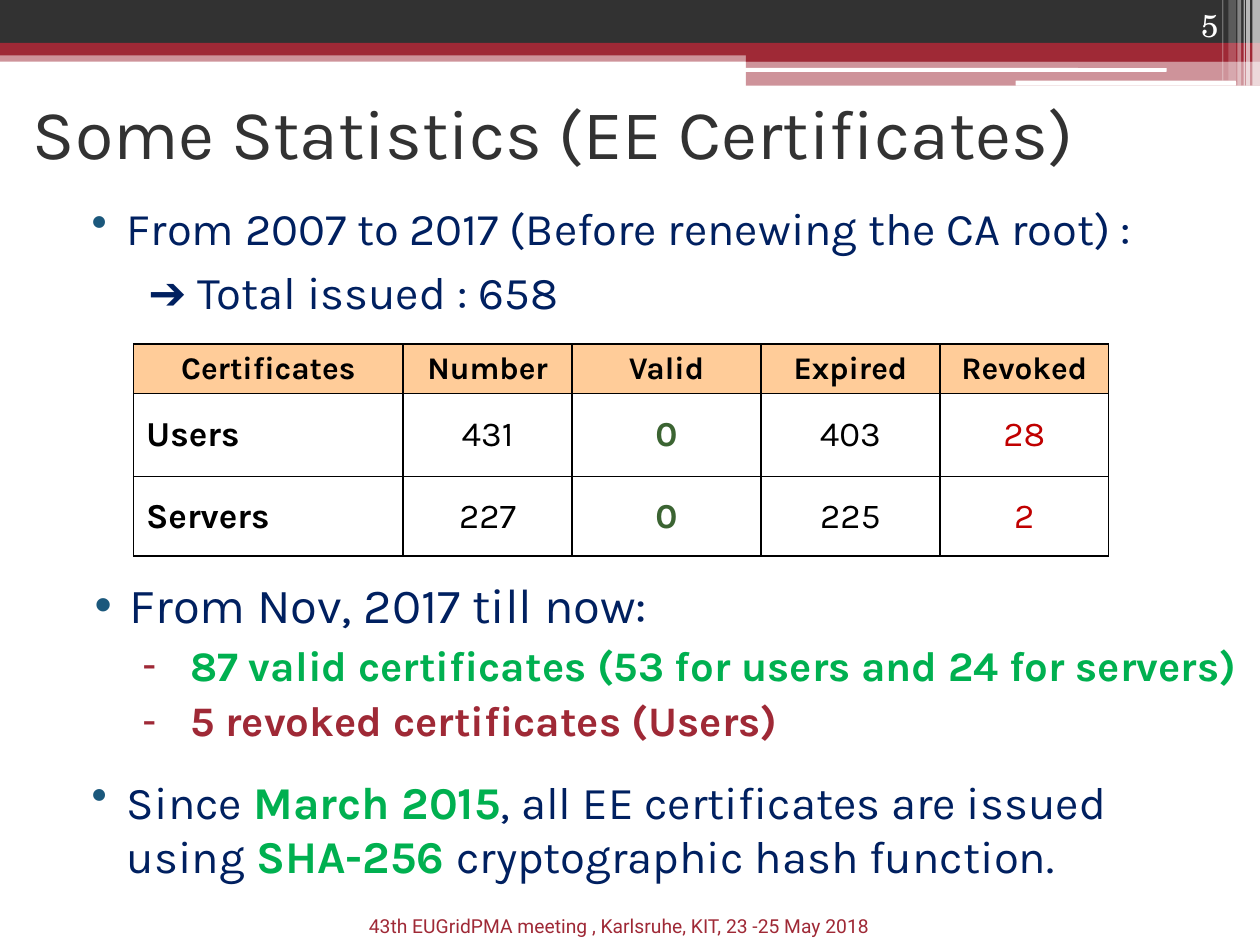
"""Build the slide with statistics on end entity certificates."""
from dataclasses import dataclass

from pptx import Presentation
from pptx.dml.color import RGBColor
from pptx.enum.shapes import MSO_SHAPE as Shape
from pptx.enum.text import MSO_ANCHOR as Anchor, MSO_AUTO_SIZE as AutoSize, PP_ALIGN as Align
from pptx.oxml.ns import qn
from pptx.util import Inches, Pt
from lxml.etree import SubElement

COLORS = {
    "dark": "323232", "red": "9F2936", "white": "FFFFFF", "black": "000000",
    "navy": "002060", "green": "00B050", "blue": "1B587C", "header": "FFCC99",
    "valid": "3B6432", "revoked": "C00000",
}


@dataclass
class Band:
    left: float
    top: float
    width: float
    height: float
    color: str
    opacity: int = 100
    preset: Shape = Shape.RECTANGLE


@dataclass
class Run:
    text: str
    color: str = "navy"
    bold: bool = False


BANDS = [
    Band(0, 0.4, 10, 0.09, "red", 50),
    Band(0, 0, 10, 0.34, "dark"),
    Band(0, 0.34, 10, 0.1, "red"),
    Band(5.92, 0.39, 4.08, 0.1, "red"),
    Band(5.92, 0.48, 4.08, 0.2, "red", 50),
    Band(5.91, 0.54, 3.35, 0.03, "white", preset=Shape.ROUNDED_RECTANGLE),
    Band(8.06, 0.64, 1.75, 0.04, "white", preset=Shape.ROUNDED_RECTANGLE),
    Band(9.94, 0, 0.06, 0.68, "white", 65),
    Band(9.89, 0, 0.03, 0.68, "white", 65),
    Band(9.87, 0, 0.01, 0.68, "white", 60),
    Band(9.82, 0, 0.03, 0.68, "white", 40),
    Band(9.75, 0, 0.06, 0.64, "white", 20),
    Band(9.7, 0, 0.01, 0.64, "white", 30),
]
COLUMN_WIDTHS = [2.14, 1.34, 1.5, 1.42, 1.34]
ROW_HEIGHTS = [0.39, 0.66, 0.63]
COLUMN_COLORS = ["black", "black", "valid", "black", "revoked"]
BOLD_COLUMNS = {0, 2}
ROWS = [
    ["Certificates", "Number", "Valid", "Expired", "Revoked"],
    ["Users", "431", "0", "403", "28"],
    ["Servers", "227", "0", "225", "2"],
]


def rgb(name: str) -> RGBColor:
    """Return the named colour."""
    return RGBColor.from_string(COLORS[name])


def draw_band(slide, band: Band) -> None:
    """Draw one stripe of the header decoration."""
    shape = slide.shapes.add_shape(
        band.preset, Inches(band.left), Inches(band.top), Inches(band.width), Inches(band.height))
    shape.shadow.inherit = False
    shape.fill.solid()
    shape.fill.fore_color.rgb = rgb(band.color)
    shape.line.fill.background()
    if band.opacity < 100:
        color = shape._element.spPr.find(qn("a:solidFill"))[0]
        SubElement(color, qn("a:alpha"), val=str(band.opacity * 1000))


def place(shape, left: float, top: float, width: float, height: float, anchor=Anchor.TOP):
    """Position a text shape and return its text frame."""
    shape.left, shape.top = Inches(left), Inches(top)
    shape.width, shape.height = Inches(width), Inches(height)
    frame = shape.text_frame
    frame.word_wrap = True
    frame.auto_size = AutoSize.NONE
    frame.vertical_anchor = anchor
    return frame


def add_text_box(slide, *box: float, anchor=Anchor.TOP):
    """Add a text box and return its text frame."""
    shape = slide.shapes.add_textbox(0, 0, 0, 0)
    return place(shape, *box, anchor=anchor)


def write(paragraph, *runs: Run, size: float, font: str = "Karla", align=Align.LEFT,
          before: float = 0, after: float = 0, spacing: float = 1.0) -> None:
    """Fill a paragraph with formatted runs."""
    paragraph.alignment = align
    paragraph.line_spacing = spacing
    paragraph.space_before, paragraph.space_after = Pt(before), Pt(after)
    for item in runs:
        run = paragraph.add_run()
        run.text = item.text
        run.font.name, run.font.size, run.font.bold = font, Pt(size), item.bold
        run.font.color.rgb = rgb(item.color)


def indent(paragraph, margin: float, first: float = 0, bullet: str = "", color: str = "blue") -> None:
    """Set the indent of a paragraph and its bullet, if any."""
    properties = paragraph._p.get_or_add_pPr()
    properties.set("marL", str(Inches(margin)))
    properties.set("indent", str(Inches(first)))
    if bullet:
        bullet_color = SubElement(properties, qn("a:buClr"))
        SubElement(bullet_color, qn("a:srgbClr"), val=COLORS[color])
        SubElement(properties, qn("a:buChar"), char=bullet)


def set_borders(cell) -> None:
    """Give a cell thin black borders."""
    properties = cell._tc.get_or_add_tcPr()
    for side in ("lnL", "lnR", "lnT", "lnB"):
        line = SubElement(properties, qn(f"a:{side}"), w=str(Pt(1)))
        fill = SubElement(line, qn("a:solidFill"))
        SubElement(fill, qn("a:srgbClr"), val=COLORS["black"])


def draw_table(slide) -> None:
    """Draw the table of certificate counts."""
    table = slide.shapes.add_table(
        len(ROWS), len(COLUMN_WIDTHS), Inches(1.06), Inches(2.73),
        Inches(sum(COLUMN_WIDTHS)), Inches(sum(ROW_HEIGHTS))).table
    for column, width in zip(table.columns, COLUMN_WIDTHS):
        column.width = Inches(width)
    for row_index, (row, height) in enumerate(zip(ROWS, ROW_HEIGHTS)):
        table.rows[row_index].height = Inches(height)
        header = row_index == 0
        for column_index, text in enumerate(row):
            cell = table.cell(row_index, column_index)
            cell.vertical_anchor = Anchor.MIDDLE
            set_borders(cell)
            if header:
                cell.fill.solid()
                cell.fill.fore_color.rgb = rgb("header")
            else:
                cell.fill.background()
            color = "black" if header else COLUMN_COLORS[column_index]
            bold = header or column_index in BOLD_COLUMNS
            align = Align.CENTER if header or column_index else Align.LEFT
            write(cell.text_frame.paragraphs[0], Run(text, color, bold),
                  size=18 if header else 20, align=align)


def main() -> None:
    """Build and save the presentation."""
    presentation = Presentation()
    presentation.slide_width, presentation.slide_height = Inches(10), Inches(7.5)
    slide = presentation.slides.add_slide(presentation.slide_layouts[1])
    for band in BANDS:
        draw_band(slide, band)

    title = place(slide.shapes.title, 0.16, 0.46, 9, 1.17, anchor=Anchor.MIDDLE)
    write(title.paragraphs[0], Run("Some Statistics (EE Certificates)", "dark"), size=40)
    number = add_text_box(slide, 8.94, 0, 0.83, 0.4, anchor=Anchor.BOTTOM)
    write(number.paragraphs[0], Run("5", "white"), size=18, font="TeX Gyre Schola", align=Align.RIGHT)
    footer = add_text_box(slide, 2.24, 7.21, 5.35, 0.31)
    write(footer.paragraphs[0], Run("43th EUGridPMA meeting , Karlsruhe, KIT, 23 -25 May 2018", "red"),
          size=11, font="Roboto", align=Align.CENTER)
    draw_table(slide)

    recent = place(slide.placeholders[1], 0.53, 4.28, 9.41, 1.89)
    heading = recent.paragraphs[0]
    write(heading, Run("From Nov, 2017 till now:"), size=28, before=3, spacing=1.5)
    indent(heading, 0.4, -0.28, "•")
    for text, color in (("87 valid certificates (53 for users and 24 for servers)", "green"),
                        ("5 revoked certificates (Users)", "red")):
        paragraph = recent.add_paragraph()
        paragraph.level = 1
        write(paragraph, Run(text, color, True), size=24, before=3)
        indent(paragraph, 0.88, -0.38, "-", "red")

    period = add_text_box(slide, 0.51, 1.37, 9, 0.73).paragraphs[0]
    write(period, Run("From 2007 to 2017 (Before renewing the CA root) :"),
          size=25.9, before=3, spacing=1.4)
    indent(period, 0.4, -0.28, "•")
    hashing = add_text_box(slide, 0.51, 6.09, 9, 1.2).paragraphs[0]
    write(hashing, Run("Since "), Run("March 2015", "green", True),
          Run(", all EE certificates are issued using "), Run("SHA-256 ", "green", True),
          Run("cryptographic hash function."), size=26, before=12, after=12)
    indent(hashing, 0.4, -0.28, "•")
    total = add_text_box(slide, 0.96, 2.05, 9, 0.6).paragraphs[0]
    write(total, Run("➔ Total issued : 658"), size=26, before=12, after=12)
    indent(total, 0.12)
    presentation.save("out.pptx")


if __name__ == "__main__":
    main()
